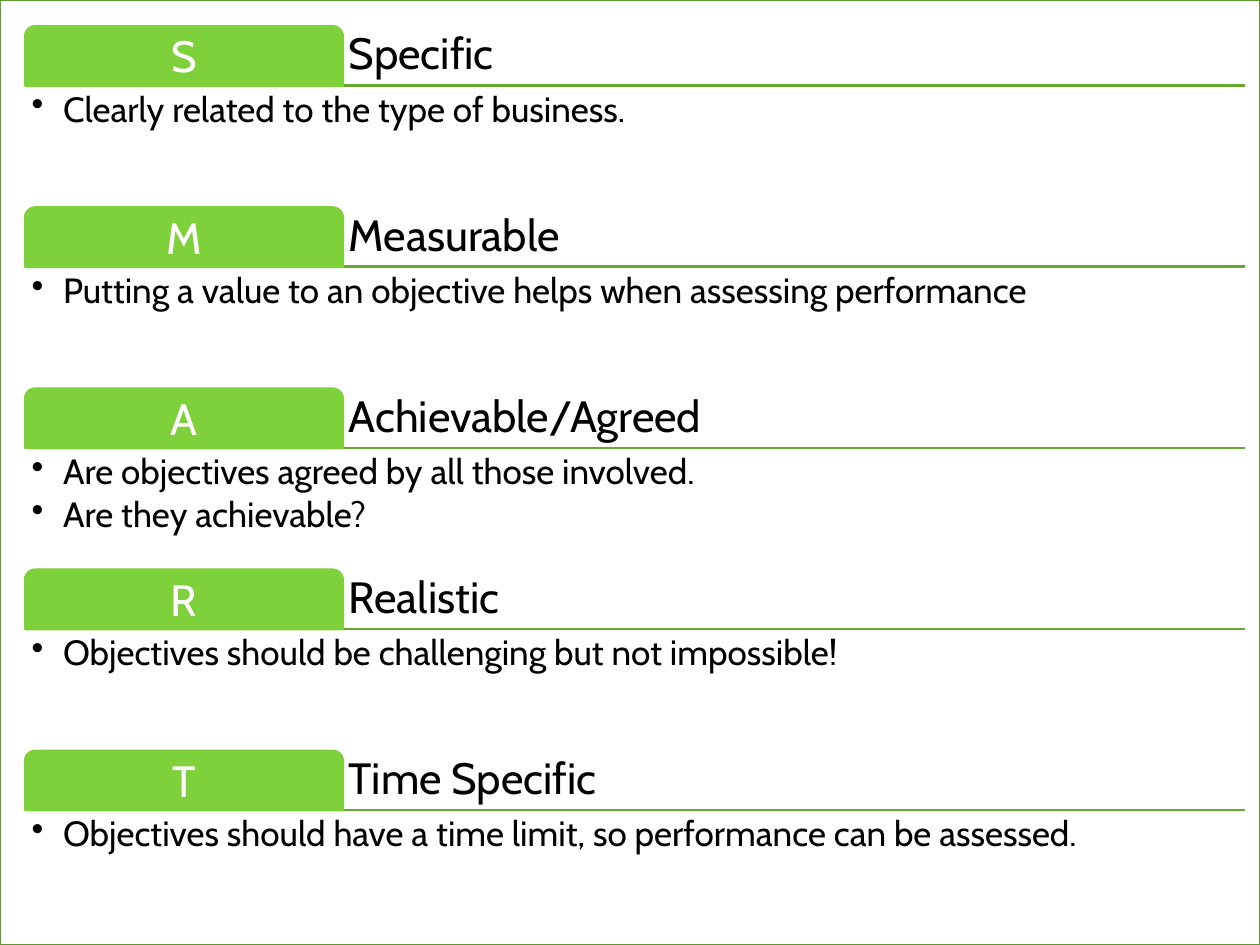
import pptx
import pptx.dml.color
import pptx.enum.shapes
import pptx.enum.text
import pptx.oxml
import pptx.oxml.ns
import pptx.util

Inches, Pt = pptx.util.Inches, pptx.util.Pt
RGBColor = pptx.dml.color.RGBColor
SHAPE = pptx.enum.shapes.MSO_SHAPE
ANCHOR = pptx.enum.text.MSO_ANCHOR
ALIGN = pptx.enum.text.PP_ALIGN

CRITERIA = [
    ("S", "Specific", ["Clearly related to the type of business."]),
    ("M", "Measurable",
     ["Putting a value to an objective helps when assessing performance"]),
    ("A", "Achievable/Agreed",
     ["Are objectives agreed by all those involved.", "Are they achievable?"]),
    ("R", "Realistic", ["Objectives should be challenging but not impossible!"]),
    ("T", "Time Specific",
     ["Objectives should have a time limit, so performance can be assessed."]),
]

WHITE = RGBColor(0xFF, 0xFF, 0xFF)
BLACK = RGBColor(0, 0, 0)
GREEN = RGBColor(0x7F, 0xD1, 0x3B)
RULE_GREEN = RGBColor(0x66, 0xA7, 0x2F)
FRAME_GREEN = RGBColor(0x5E, 0x9B, 0x2C)

SLIDE_W, SLIDE_H = 10, 7.5
LEFT, TOP = 0.2, 0.21
ROW_W, TAB_W = 9.68, 2.52
HEAD_H, DETAIL_H = 0.47, 0.94
PITCH = 5.75 / (len(CRITERIA) - 1)
INSET, INDENT = 0.05, 0.25

HEAD_FORMAT = {"size": Pt(25), "name": "Cabin"}
DETAIL_FORMAT = {"size": Pt(20), "name": "Cabin"}


def add_panel(slide, preset, box, fill, outline):
    panel = slide.shapes.add_shape(preset, *map(Inches, box))
    panel.shadow.inherit = False
    panel.fill.solid()
    panel.fill.fore_color.rgb = fill
    panel.line.color.rgb = outline
    panel.line.width = Pt(1.5)
    return panel


def write(holder, lines, font_format, color, anchor, align, space_after):
    frame = holder.text_frame
    settings = {"word_wrap": True, "vertical_anchor": anchor}
    for side in ("left", "top", "right", "bottom"):
        settings[f"margin_{side}"] = Inches(INSET)
    for name, value in settings.items():
        setattr(frame, name, value)
    frame.text = "\n".join(lines)
    for paragraph in frame.paragraphs:
        paragraph.alignment = align
        paragraph.line_spacing = 0.9
        paragraph.space_after = space_after
        font = paragraph.runs[0].font
        for name, value in font_format.items():
            setattr(font, name, value)
        font.color.rgb = color
    return frame


def add_bullets(frame):
    for paragraph in frame.paragraphs:
        properties = paragraph._p.get_or_add_pPr()
        properties.set("marL", str(Inches(INDENT)))
        properties.set("indent", str(-Inches(INDENT)))
        bullet = pptx.oxml.parse_xml(
            f'<a:buChar {pptx.oxml.ns.nsdecls("a")} char="•"/>')
        properties.append(bullet)


def add_rule(slide, y):
    rule = slide.shapes.add_connector(
        pptx.enum.shapes.MSO_CONNECTOR.STRAIGHT,
        Inches(LEFT), Inches(y), Inches(LEFT + ROW_W), Inches(y))
    rule.line.color.rgb = RULE_GREEN
    rule.line.width = Pt(1.5)
    rule._element.spPr.append(
        pptx.oxml.parse_xml(f'<a:effectLst {pptx.oxml.ns.nsdecls("a")}/>'))


def add_criterion(slide, top, letter, heading, details):
    base = top + HEAD_H
    add_rule(slide, base)

    heading_box = slide.shapes.add_textbox(*map(
        Inches, (LEFT + TAB_W, top, ROW_W - TAB_W, HEAD_H)))
    write(heading_box, [heading], HEAD_FORMAT, BLACK,
          ANCHOR.BOTTOM, ALIGN.LEFT, Pt(0))

    tab = add_panel(slide, SHAPE.ROUND_2_SAME_RECTANGLE,
                    (LEFT, top, TAB_W, HEAD_H), GREEN, GREEN)
    tab.adjustments[0] = 0.17
    tab_text = write(tab, [letter], HEAD_FORMAT, WHITE,
                     ANCHOR.MIDDLE, ALIGN.CENTER, Pt(0))
    tab_text.margin_top = Inches(INSET + 0.02)

    detail_box = slide.shapes.add_textbox(*map(
        Inches, (LEFT, base, ROW_W, DETAIL_H)))
    add_bullets(write(detail_box, details, DETAIL_FORMAT, BLACK,
                      ANCHOR.TOP, ALIGN.LEFT, Pt(3)))


def main():
    deck = pptx.Presentation()
    deck.slide_width, deck.slide_height = Inches(SLIDE_W), Inches(SLIDE_H)
    slide = deck.slides.add_slide(deck.slide_layouts.get_by_name("Blank"))
    add_panel(slide, SHAPE.RECTANGLE, (0, 0, SLIDE_W, SLIDE_H),
              WHITE, FRAME_GREEN)
    for row, criterion in enumerate(CRITERIA):
        add_criterion(slide, TOP + row * PITCH, *criterion)
    deck.save("out.pptx")


if __name__ == "__main__":
    main()
